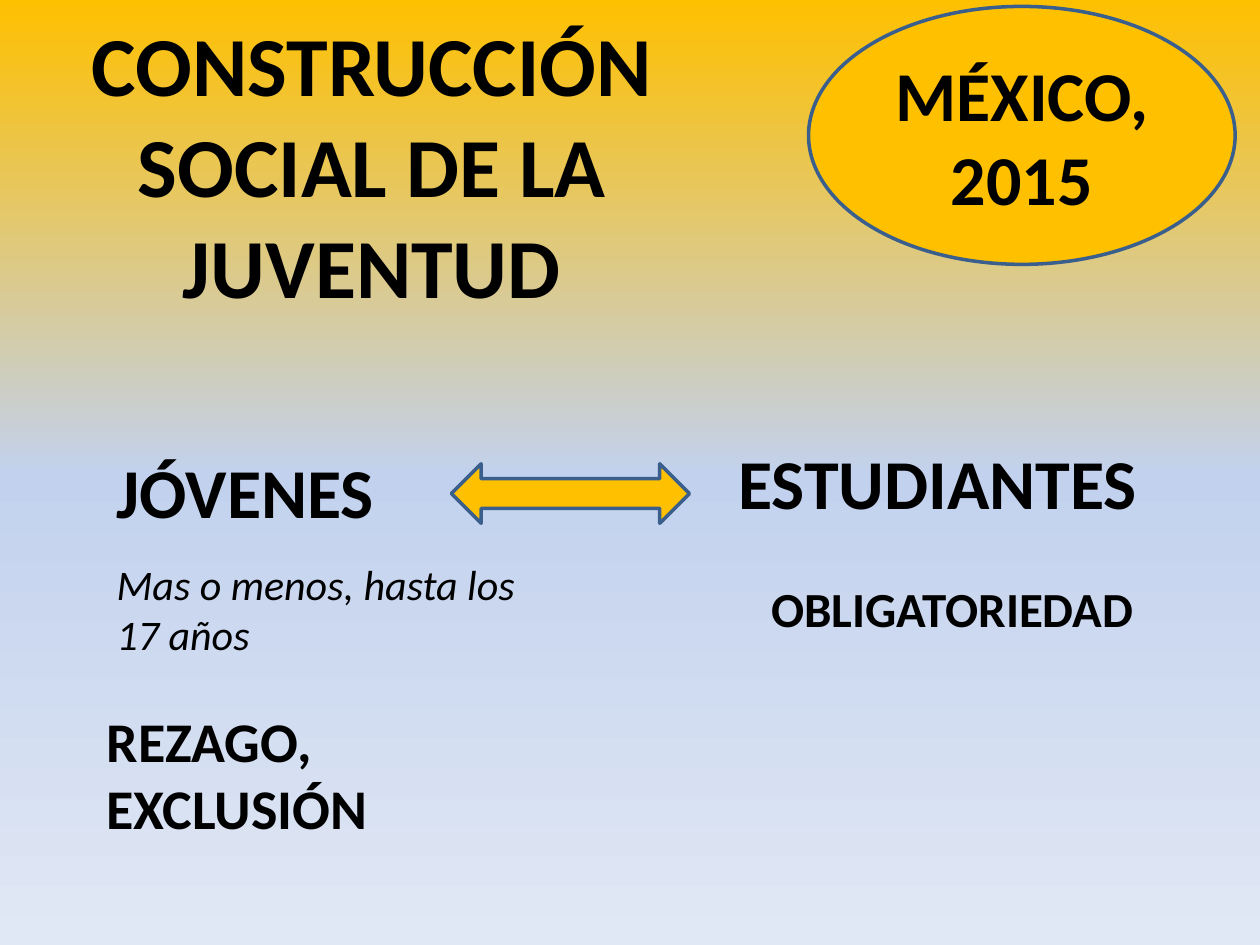
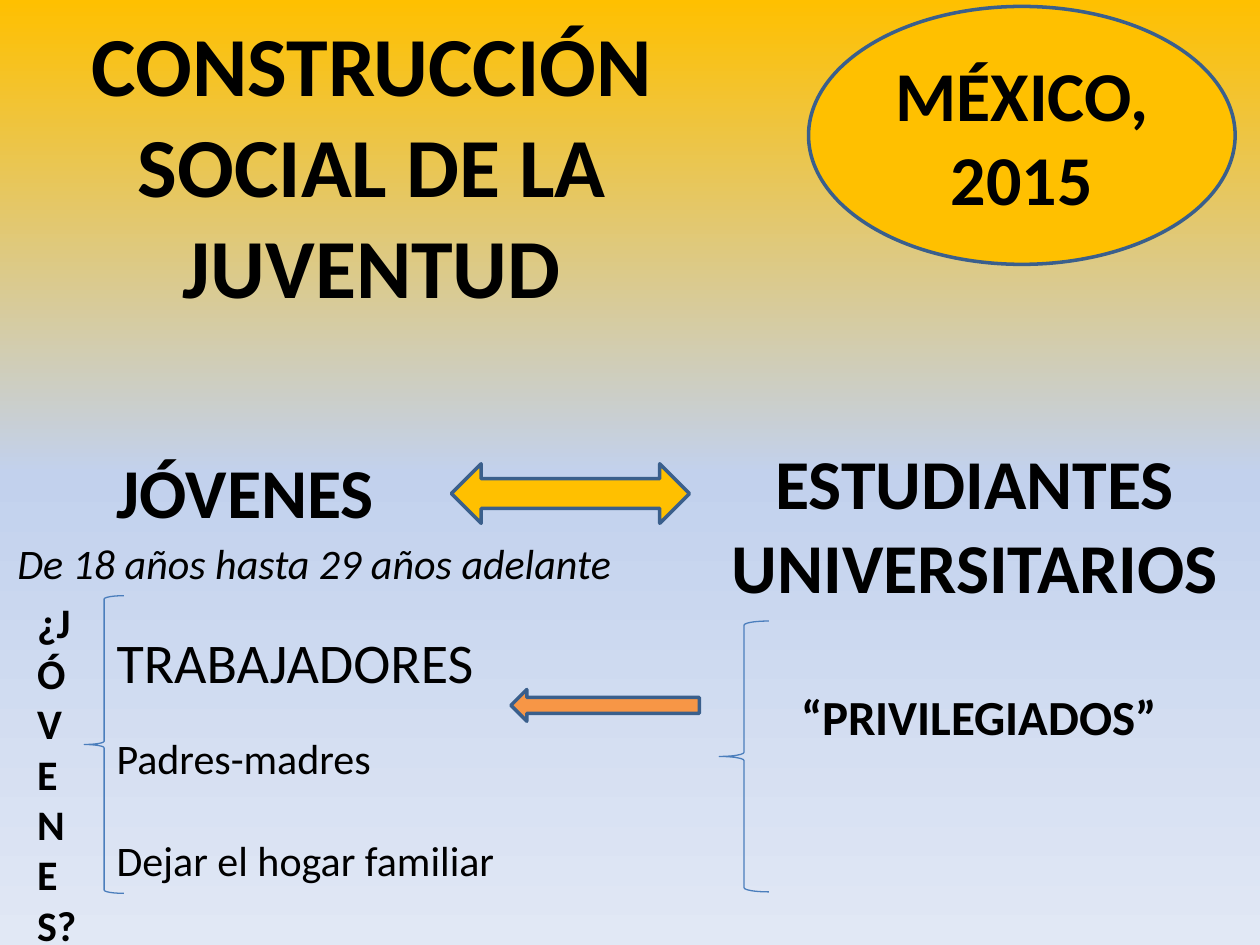
from copy import deepcopy
from dataclasses import dataclass

from pptx import Presentation
from pptx.dml.color import RGBColor as Color
from pptx.enum.shapes import MSO_SHAPE as Form
from pptx.enum.text import MSO_ANCHOR as Anchor, PP_ALIGN as Align
from pptx.util import Cm, Pt


@dataclass(frozen=True)
class Theme:
    font: str = "Calibri"
    ink: str = "000000"
    gold: str = "FFC000"
    orange: str = "F79646"
    edge: str = "3A5F8C"
    brace: str = "4B7EBC"
    sky: tuple = ((0, "FFC000"), (0.5, "C2D1ED"), (1, "E1E8F5"))
    title: int = 48
    head: int = 40
    big: int = 32
    mid: int = 28
    small: int = 24
    thick: float = 2
    thin: float = 0.75


THEME = Theme()


def tint(code):
    return Color.from_string(code)


def paint_sky(slide):
    fill = slide.background.fill
    fill.gradient()
    fill.gradient_angle = 270
    stops = slide.element.xpath(".//a:gsLst")[0]
    stops.append(deepcopy(stops[0]))
    for stop, (place, code) in zip(fill.gradient_stops, THEME.sky):
        stop.position = place
        stop.color.rgb = tint(code)


def write(frame, text, size, bold=False, slant=False, align=Align.LEFT, gap=0, more=False):
    line = frame.add_paragraph() if more else frame.paragraphs[0]
    line.text = text
    line.alignment = align
    line.space_before = Pt(gap)
    for run in line.runs:
        font = run.font
        font.name = THEME.font
        font.size = Pt(size)
        font.bold = bold
        font.italic = slant
        font.color.rgb = tint(THEME.ink)


def add_box(slide, area, text, size, **style):
    frame = slide.shapes.add_textbox(*map(Cm, area)).text_frame
    frame.word_wrap = True
    write(frame, text, size, **style)
    return frame


def add_form(slide, form, area, fill=None, edge=THEME.edge, width=THEME.thick):
    shape = slide.shapes.add_shape(form, *map(Cm, area))
    shape.shadow.inherit = False
    if fill:
        shape.fill.solid()
        shape.fill.fore_color.rgb = tint(fill)
    else:
        shape.fill.background()
    shape.line.color.rgb = tint(edge)
    shape.line.width = Pt(width)
    return shape


def add_brace(slide, area):
    add_form(slide, Form.LEFT_BRACE, area, edge=THEME.brace, width=THEME.thin)


def add_base(deck, group, room):
    slide = deck.slides.add_slide(deck.slide_layouts[6])
    paint_sky(slide)
    add_box(slide, (0.1, 0.13, 14.8, 8.46), "CONSTRUCCIÓN SOCIAL DE LA JUVENTUD",
            THEME.title, bold=True, align=Align.CENTER)
    badge = add_form(slide, Form.OVAL, (16.3, 0.13, 8.6, 5.2), THEME.gold).text_frame
    badge.vertical_anchor = Anchor.MIDDLE
    for row, text in enumerate(("MÉXICO,", "2015")):
        write(badge, text, THEME.head, bold=True, align=Align.CENTER, more=row > 0)
    add_box(slide, (2.1, 8.92, 8.8, 1.96), "JÓVENES", THEME.head, bold=True)
    add_box(slide, (13.9, 8.74, *room), group, THEME.head, bold=True, align=Align.CENTER)
    add_form(slide, Form.LEFT_RIGHT_ARROW, (9.1, 9.35, 4.8, 1.2), THEME.gold)
    return slide


def add_teens(deck):
    slide = add_base(deck, "ESTUDIANTES", (10, 1.96))
    add_box(slide, (2.1, 11.13, 8.8, 2.31), "Mas o menos, hasta los 17 años",
            THEME.small, slant=True)
    add_box(slide, (15.3, 11.53, 8.6, 1.45), "OBLIGATORIEDAD", THEME.mid, bold=True)
    add_box(slide, (1.9, 14.12, 8, 3), "REZAGO,\nEXCLUSIÓN", THEME.big, bold=True)


def add_grown(deck):
    slide = add_base(deck, "ESTUDIANTES UNIVERSITARIOS", (11.5, 3.68))
    add_box(slide, (0.1, 10.72, 12.8, 1.27), "De 18 años hasta 29 años adelante",
            THEME.small, slant=True)
    add_box(slide, (15.9, 13.72, 9, 1.45), "“PRIVILEGIADOS”", THEME.mid, bold=True)
    roles = add_box(slide, (2.1, 12.52, 10.8, 5.46), "TRABAJADORES", THEME.big)
    write(roles, "Padres-madres", THEME.small, gap=22, more=True)
    write(roles, "Dejar el hogar familiar", THEME.small, gap=29, more=True)
    add_box(slide, (0.5, 11.91, 1.6, 7.44), "¿J\nÓ\nV\nE\nN\nE\nS?", THEME.small, bold=True)
    add_brace(slide, (1.7, 12.01, 0.8, 6))
    add_brace(slide, (14.5, 12.52, 1, 5.46))
    add_form(slide, Form.LEFT_ARROW, (10.3, 13.9, 3.8, 0.64), THEME.orange)


def main():
    deck = Presentation()
    deck.slide_width = Cm(25.4)
    deck.slide_height = Cm(19.05)
    add_teens(deck)
    add_grown(deck)
    deck.save("out.pptx")


if __name__ == "__main__":
    main()
